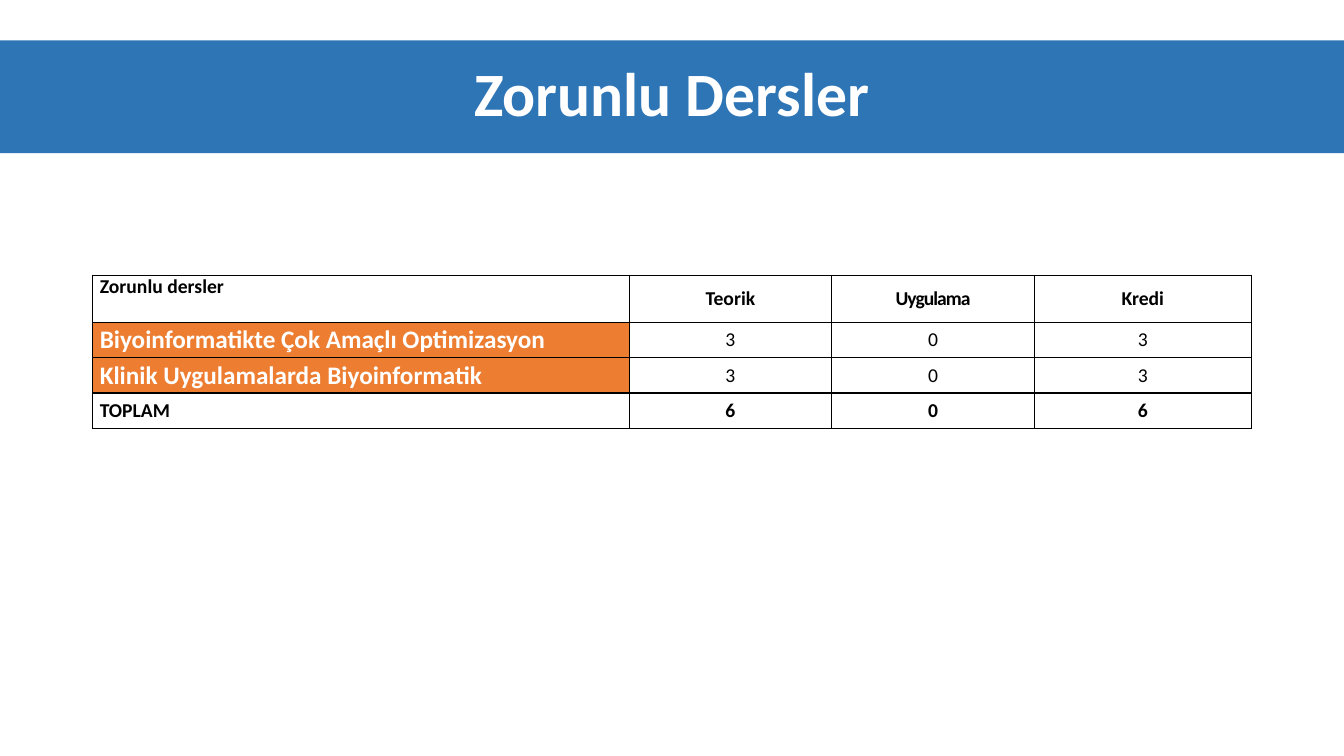
from lxml import etree
from pptx import Presentation
from pptx.dml.color import RGBColor
from pptx.enum.shapes import MSO_SHAPE
from pptx.enum.text import MSO_ANCHOR, PP_ALIGN
from pptx.oxml.ns import qn
from pptx.util import Inches, Pt

WHITE = RGBColor(0xFF, 0xFF, 0xFF)
BLACK = RGBColor(0x00, 0x00, 0x00)
BLUE = RGBColor(0x2E, 0x75, 0xB6)
ORANGE = RGBColor(0xED, 0x7D, 0x31)

COLUMN_WIDTHS = [5.32, 2.01, 2.01, 2.15]
ROW_HEIGHTS = [0.47, 0.35, 0.35, 0.35]
COURSE_ROWS = [
    ["Zorunlu dersler", "Teorik", "Uygulama", "Kredi"],
    ["Biyoinformatikte Çok Amaçlı Optimizasyon", "3", "0", "3"],
    ["Klinik Uygulamalarda Biyoinformatik", "3", "0", "3"],
    ["TOPLAM", "6", "0", "6"],
]


class SlideBuilder:
    font_name = "Calibri"
    border_width = Pt(1)
    cell_margin = Inches(0.07)

    def __init__(self, slide):
        self.slide = slide

    def styled_text(self, text_frame, text, size, color, bold, alignment):
        text_frame.text = text
        paragraph = text_frame.paragraphs[0]
        paragraph.alignment = alignment
        font = paragraph.runs[0].font
        font.name = self.font_name
        font.size = Pt(size)
        font.bold = bold
        font.color.rgb = color
        return paragraph

    def title_band(self, text, left, top, width, height):
        shape = self.slide.shapes.add_shape(
            MSO_SHAPE.RECTANGLE, Inches(left), Inches(top), Inches(width), Inches(height))
        shape.shadow.inherit = False
        shape.fill.solid()
        shape.fill.fore_color.rgb = BLUE
        shape.line.fill.background()
        shape.text_frame.word_wrap = True
        shape.text_frame.vertical_anchor = MSO_ANCHOR.MIDDLE
        paragraph = self.styled_text(
            shape.text_frame, text, 44, WHITE, True, PP_ALIGN.CENTER)
        paragraph.line_spacing = 0.9

    def border(self, cell):
        properties = cell._tc.get_or_add_tcPr()
        for position, side in enumerate(("lnL", "lnR", "lnT", "lnB")):
            line = etree.Element(qn(f"a:{side}"), w=str(self.border_width))
            fill = etree.SubElement(line, qn("a:solidFill"))
            etree.SubElement(fill, qn("a:srgbClr"), val=str(BLACK))
            properties.insert(position, line)

    def cell(self, cell, text, size, color, bold, alignment, fill=None):
        cell.margin_left = cell.margin_right = self.cell_margin
        cell.margin_top = cell.margin_bottom = 0
        cell.vertical_anchor = MSO_ANCHOR.MIDDLE
        if fill is None:
            cell.fill.background()
        else:
            cell.fill.solid()
            cell.fill.fore_color.rgb = fill
        self.border(cell)
        self.styled_text(cell.text_frame, text, size, color, bold, alignment)

    def course_table(self, rows, left, top, widths, heights):
        table = self.slide.shapes.add_table(
            len(rows), len(widths), Inches(left), Inches(top),
            Inches(sum(widths)), Inches(sum(heights))).table
        table.first_row = table.horz_banding = False
        for column, width in zip(table.columns, widths):
            column.width = Inches(width)
        for row, height in zip(table.rows, heights):
            row.height = Inches(height)
        for row_index, texts in enumerate(rows):
            is_course = 0 < row_index < len(rows) - 1
            for column_index, text in enumerate(texts):
                cell = table.cell(row_index, column_index)
                if column_index > 0:
                    self.cell(cell, text, 14, BLACK, not is_course, PP_ALIGN.CENTER)
                elif is_course:
                    self.cell(cell, text, 18, WHITE, True, PP_ALIGN.LEFT, ORANGE)
                else:
                    self.cell(cell, text, 14, BLACK, True, PP_ALIGN.LEFT)
        table.cell(0, 0).vertical_anchor = MSO_ANCHOR.TOP
        practice_run = table.cell(0, 2).text_frame.paragraphs[0].runs[0]
        practice_run._r.get_or_add_rPr().set("spc", "-70")


def main():
    presentation = Presentation()
    presentation.slide_width = Inches(13.33)
    presentation.slide_height = Inches(7.5)
    slide = presentation.slides.add_slide(presentation.slide_layouts[6])
    builder = SlideBuilder(slide)
    builder.title_band("Zorunlu Dersler", 0, 0.4, 13.33, 1.12)
    builder.course_table(COURSE_ROWS, 0.92, 2.73, COLUMN_WIDTHS, ROW_HEIGHTS)
    presentation.save("out.pptx")


if __name__ == "__main__":
    main()
